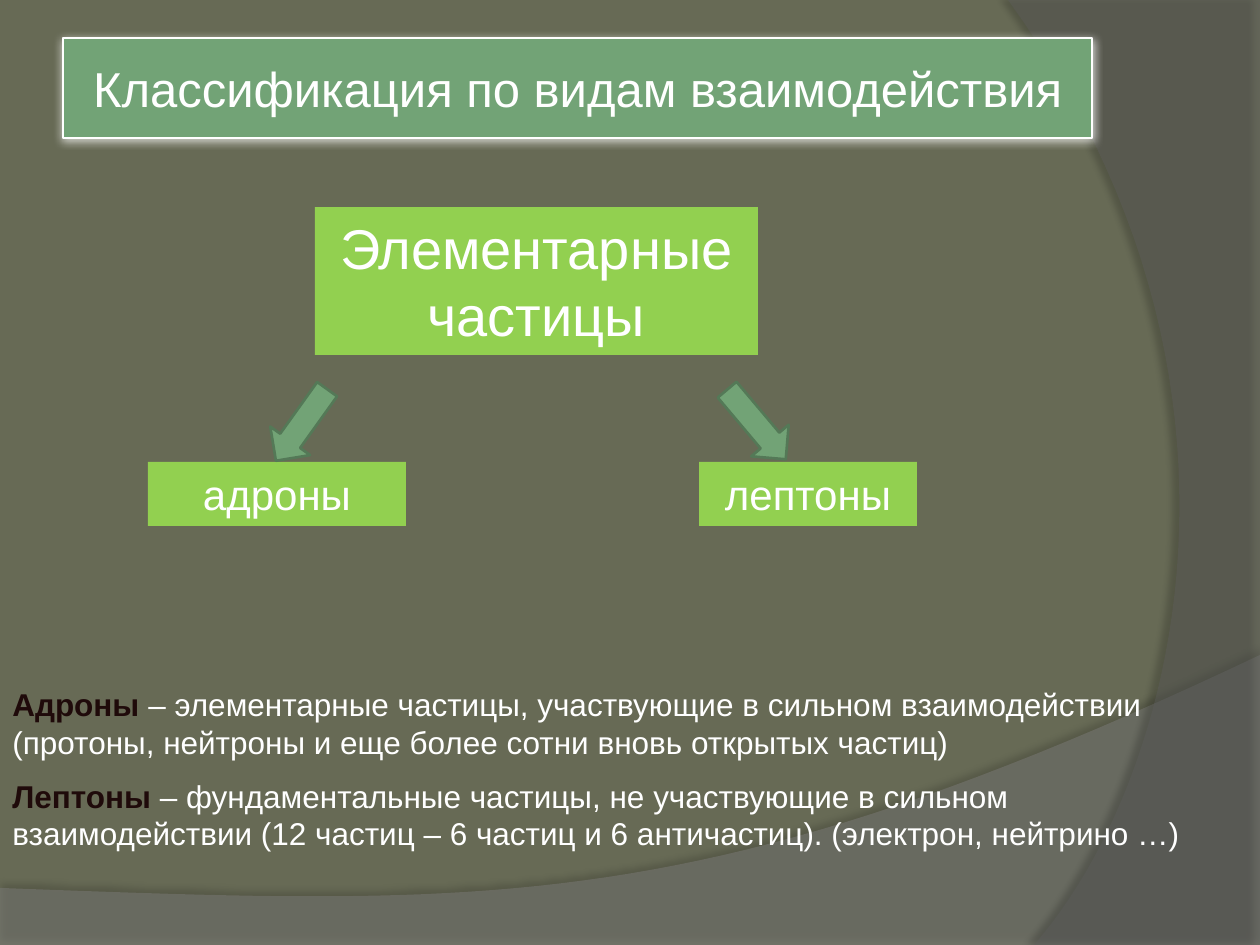
import dataclasses
import typing

import lxml.etree
import pptx
import pptx.dml.color
import pptx.enum.shapes
import pptx.enum.text
import pptx.oxml.ns
import pptx.util

SCALE = 914400 / 126
FONT = "Arial"
WHITE, GREEN, LIME, DARK = "FFFFFF", "72A376", "92D050", "1F0A0A"
Point = tuple[int, int]


@dataclasses.dataclass
class Box:
    text: str
    left: int
    top: int
    width: int
    height: int
    size: int


@dataclasses.dataclass
class Arrow:
    left: int
    top: int
    width: int
    height: int
    turn: float


@dataclasses.dataclass
class Wave:
    edge: list[Point]
    curve: list[Point]
    color: str
    alpha: int
    shade: int
    dist: float
    angle: int


@dataclasses.dataclass
class Term:
    name: str
    text: str


BOXES = [
    Box("Элементарные частицы", 315, 207, 443, 148, 32),
    Box("адроны", 148, 462, 258, 64, 24),
    Box("лептоны", 699, 462, 218, 64, 24),
]
ARROWS = [Arrow(277, 381, 49, 88, 35.6), Arrow(732, 379, 49, 91, 319.9)]
WAVES = [
    Wave([(0, 888), (0, 945), (1260, 945)],
         [(1260, 655), (704, 919), (493, 906), (0, 888)],
         "7F7F7F", 45, 35, 3.5, 270),
    Wave([(1260, 0), (1260, 945)],
         [(1034, 945), (1178, 780), (1283, 378), (1008, 0)],
         "5E5E5E", 40, 45, 4, 180),
]
TERMS = [
    Term("Адроны ", "– элементарные частицы, участвующие в сильном взаимодействии "
         "(протоны, нейтроны и еще более сотни вновь открытых частиц)"),
    Term("Лептоны ", "– фундаментальные частицы, не участвующие в сильном взаимодействии "
         "(12 частиц – 6 частиц и 6 античастиц). (электрон, нейтрино …)"),
]


def px(num: float) -> pptx.util.Emu:
    """Turn pixels into EMU."""
    return pptx.util.Emu(round(num * SCALE))


def tint(code: str) -> pptx.dml.color.RGBColor:
    """Turn a hex string into a colour."""
    return pptx.dml.color.RGBColor.from_string(code)


def write(para: typing.Any, text: str, *, size: int, color: str = WHITE,
          bold: bool = False, align: typing.Any = None) -> None:
    """Add a formatted run to a paragraph."""
    run = para.add_run()
    run.text = text
    font = run.font
    font.name, font.size, font.bold = FONT, pptx.util.Pt(size), bold
    font.color.rgb = tint(color)
    if align is not None:
        para.alignment = align


def paint(shape: typing.Any, fill: str, line: str | None = None) -> None:
    """Give a shape a solid fill and an optional outline."""
    shape.shadow.inherit = False
    shape.fill.solid()
    shape.fill.fore_color.rgb = tint(fill)
    if line:
        shape.line.color.rgb = tint(line)
        shape.line.width = pptx.util.Pt(1.5)
    else:
        shape.line.fill.background()


def sub(node: typing.Any, tag: str, **attrs: typing.Any) -> typing.Any:
    """Append a drawing element to a node."""
    texts = {key: str(val) for key, val in attrs.items()}
    return lxml.etree.SubElement(node, pptx.oxml.ns.qn(tag), texts)


def shade(shape: typing.Any, color: str, alpha: int, blur: float,
          dist: float, angle: int) -> None:
    """Put an outer shadow on a painted shape."""
    node = shape.element.spPr.find(pptx.oxml.ns.qn("a:effectLst"))
    outer = sub(node, "a:outerShdw", blurRad=pptx.util.Pt(blur),
                dist=pptx.util.Pt(dist), dir=angle * 60000,
                algn="ctr", rotWithShape=0)
    sub(sub(outer, "a:srgbClr", val=color), "a:alpha", val=alpha * 1000)


def bend(ends: list[Point], steps: int = 48) -> list[tuple[float, float]]:
    """Sample a cubic curve."""
    def mix(axis: int, t: float) -> float:
        a, b, c, d = (end[axis] for end in ends)
        u = 1 - t
        return a * u**3 + 3 * b * u * u * t + 3 * c * u * t * t + d * t**3
    return [(mix(0, i / steps), mix(1, i / steps)) for i in range(steps + 1)]


def draw_wave(shapes: typing.Any, wave: Wave) -> None:
    """Draw a translucent curved area."""
    first, *rest = [(px(x), px(y)) for x, y in wave.edge + bend(wave.curve)]
    form = shapes.build_freeform(*first)
    form.add_line_segments(rest, close=True)
    shape = form.convert_to_shape()
    paint(shape, wave.color)
    clr = shape.element.spPr.find(".//" + pptx.oxml.ns.qn("a:srgbClr"))
    sub(clr, "a:alpha", val=wave.alpha * 1000)
    shade(shape, "000000", wave.shade, 4, wave.dist, wave.angle)


def draw_title(title: typing.Any, text: str) -> None:
    """Place and format the title above the waves."""
    title.element.getparent().append(title.element)
    title.left, title.top, title.width, title.height = map(px, (63, 38, 1029, 100))
    paint(title, GREEN, WHITE)
    shade(title, WHITE, 70, 5, 1, 90)
    frame = title.text_frame
    frame.word_wrap = True
    frame.auto_size = pptx.enum.text.MSO_AUTO_SIZE.NONE
    frame.vertical_anchor = pptx.enum.text.MSO_ANCHOR.MIDDLE
    frame.margin_left = frame.margin_right = px(6)
    frame.margin_top = frame.margin_bottom = px(6)
    write(frame.paragraphs[0], text, size=28, align=pptx.enum.text.PP_ALIGN.CENTER)


def draw_box(shapes: typing.Any, box: Box) -> None:
    """Draw a labelled box."""
    shape = shapes.add_textbox(*map(px, (box.left, box.top, box.width, box.height)))
    paint(shape, LIME)
    frame = shape.text_frame
    frame.word_wrap = True
    para = frame.paragraphs[0]
    para.space_before = pptx.util.Pt(box.size / 2)
    write(para, box.text, size=box.size, align=pptx.enum.text.PP_ALIGN.CENTER)


def draw_terms(shapes: typing.Any, terms: list[Term]) -> None:
    """Write the definitions."""
    frame = shapes.add_textbox(*map(px, (0, 679, 1260, 184))).text_frame
    frame.word_wrap = True
    for i, term in enumerate(terms):
        para = frame.add_paragraph() if i else frame.paragraphs[0]
        para.space_before = pptx.util.Pt(9)
        write(para, term.name, size=18, color=DARK, bold=True)
        write(para, term.text, size=18)


def draw_arrow(shapes: typing.Any, arrow: Arrow) -> None:
    """Draw a turned block arrow."""
    kind = pptx.enum.shapes.MSO_SHAPE.DOWN_ARROW
    spot = map(px, (arrow.left, arrow.top, arrow.width, arrow.height))
    shape = shapes.add_shape(kind, *spot)
    shape.rotation = arrow.turn
    paint(shape, GREEN, "547957")


def main() -> None:
    """Build and save the slide."""
    deck = pptx.Presentation()
    deck.slide_width, deck.slide_height = px(1260), px(945)
    slide = deck.slides.add_slide(deck.slide_layouts[5])
    slide.background.fill.solid()
    slide.background.fill.fore_color.rgb = tint("676A55")
    shapes = slide.shapes
    for wave in WAVES:
        draw_wave(shapes, wave)
    draw_title(shapes.title, "Классификация по видам взаимодействия")
    for box in BOXES:
        draw_box(shapes, box)
    draw_terms(shapes, TERMS)
    for arrow in ARROWS:
        draw_arrow(shapes, arrow)
    deck.save("out.pptx")


if __name__ == "__main__":
    main()
